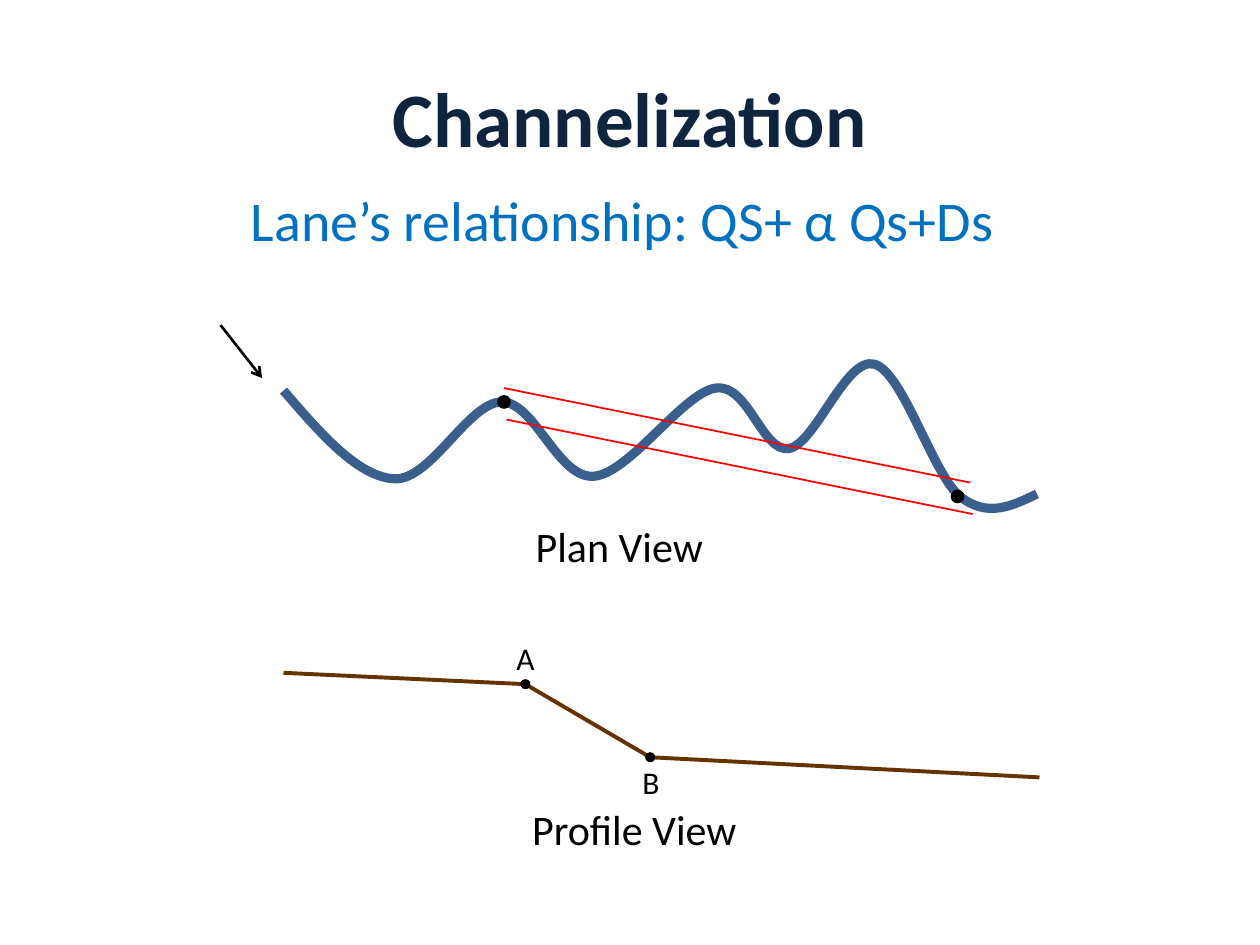
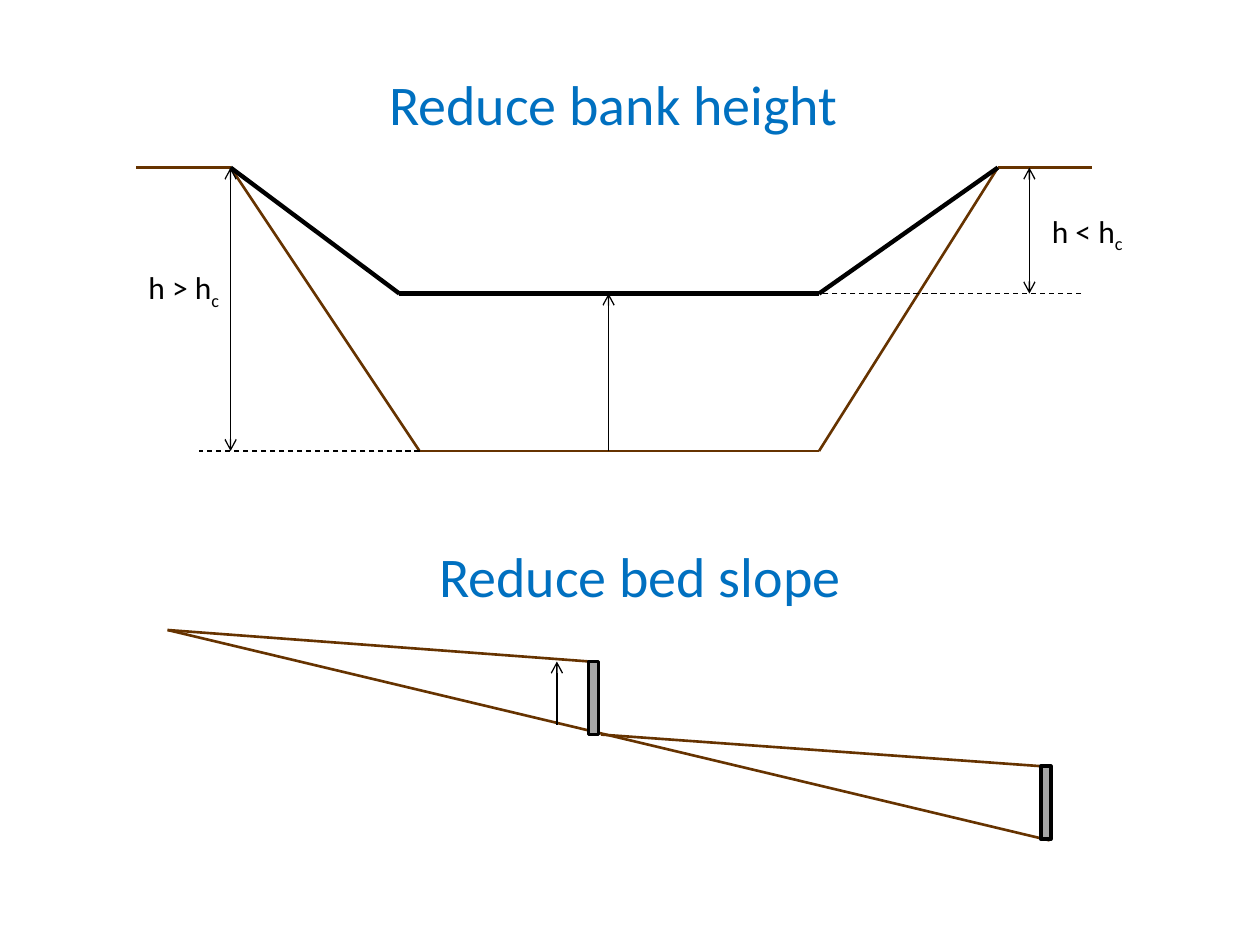
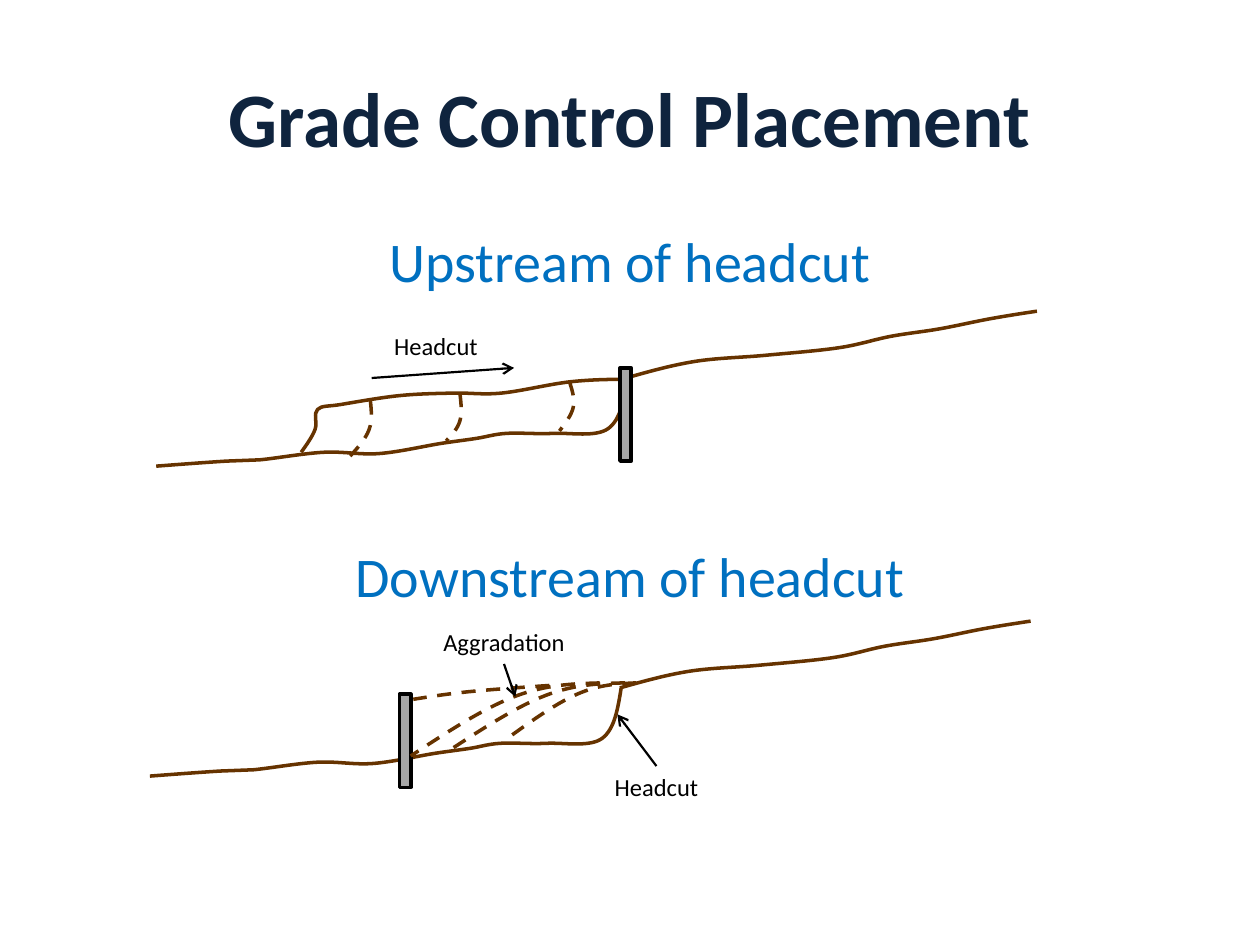
from dataclasses import dataclass
from itertools import pairwise

from lxml.etree import SubElement
from pptx import Presentation
from pptx.dml.color import RGBColor
from pptx.enum.dml import MSO_LINE
from pptx.enum.shapes import MSO_CONNECTOR, MSO_SHAPE
from pptx.enum.text import MSO_ANCHOR, PP_ALIGN
from pptx.oxml.ns import qn
from pptx.slide import Slide
from pptx.util import Emu, Pt

PX = 9144  # EMU per px, 100 px to the inch
FONT = "Calibri"
COLORS = {
    "title": "0F243E",
    "heading": "0070C0",
    "ink": "000000",
    "bed": "663300",
    "river": "3A5F8C",
    "cut": "FF0000",
    "weir": "A6A6A6",
}

Point = tuple[float, float]


@dataclass(frozen=True)
class TextStyle:
    size: int
    height: int
    color: str = "ink"
    bold: bool = False
    align: PP_ALIGN = PP_ALIGN.CENTER
    anchor: MSO_ANCHOR = MSO_ANCHOR.TOP


@dataclass(frozen=True)
class Label:
    text: str
    left: int
    top: int
    width: int
    style: TextStyle
    subscript: str = ""


@dataclass(frozen=True)
class Pen:
    color: str
    width: float
    dashed: bool = False
    head: bool = False
    tail: bool = False


@dataclass(frozen=True)
class Block:
    left: int
    top: int
    width: int
    height: int


TITLE = TextStyle(44, 125, "title", bold=True, anchor=MSO_ANCHOR.MIDDLE)
HEADING = TextStyle(32, 64, "heading")
CAPTION = TextStyle(24, 51)
MARK = TextStyle(18, 40, align=PP_ALIGN.LEFT)
NOTE = TextStyle(14, 34)

RIVER = Pen("river", 5.25)
CUT = Pen("cut", 1)
PROFILE = Pen("bed", 2.25)
BED = Pen("bed", 1.5)
GROUND = Pen("bed", 2)
GROUND_DASHED = Pen("bed", 2, dashed=True)
RAISED = Pen("ink", 2.5)
GUIDE = Pen("ink", 0.75, dashed=True)
RISE = Pen("ink", 0.75, tail=True)
SPAN = Pen("ink", 0.75, head=True, tail=True)
FLOW = Pen("ink", 1.5, tail=True)
POINTER = Pen("ink", 1.25, tail=True)


def px(value: float) -> Emu:
    return Emu(round(value * PX))


def rgb(name: str) -> RGBColor:
    return RGBColor.from_string(COLORS[name])


def add_label(s: Slide, label: Label) -> None:
    style = label.style
    box = s.shapes.add_textbox(
        px(label.left), px(label.top), px(label.width), px(style.height)
    )
    tf = box.text_frame
    tf.word_wrap = True
    tf.vertical_anchor = style.anchor
    p = tf.paragraphs[0]
    p.alignment = style.align
    p.font.name = FONT
    p.font.size = Pt(style.size)
    p.font.bold = style.bold
    p.font.color.rgb = rgb(style.color)
    p.add_run().text = label.text
    if label.subscript:
        r = p.add_run()
        r.text = label.subscript
        r._r.get_or_add_rPr().set("baseline", "-25000")


def add_title(s: Slide, text: str) -> None:
    add_label(s, Label(text, 50, 30, 900, TITLE))


def apply_pen(sp, pen: Pen) -> None:
    sp.line.color.rgb = rgb(pen.color)
    sp.line.width = Pt(pen.width)
    if pen.dashed:
        sp.line.dash_style = MSO_LINE.DASH
    ln = sp.element.spPr.find(qn("a:ln"))
    for tag, wanted in (("a:headEnd", pen.head), ("a:tailEnd", pen.tail)):
        if wanted:
            SubElement(ln, qn(tag), type="arrow")


def add_line(s: Slide, pen: Pen, start: Point, end: Point) -> None:
    ends = (px(v) for v in (*start, *end))
    sp = s.shapes.add_connector(MSO_CONNECTOR.STRAIGHT, *ends)
    apply_pen(sp, pen)
    SubElement(sp.element.spPr, qn("a:effectLst"))


def add_chain(s: Slide, pen: Pen, points: list[Point]) -> None:
    """Join successive points with straight lines."""
    for start, end in pairwise(points):
        add_line(s, pen, start, end)


def midpoint(a: Point, b: Point) -> Point:
    return (a[0] + b[0]) / 2, (a[1] + b[1]) / 2


def bezier_handles(points: list[Point]) -> list[tuple[Point, Point]]:
    """Control points of each segment of a smooth curve through the points."""
    before, after = {}, {}
    for i in range(1, len(points) - 1):
        (x0, y0), (x, y), (x1, y1) = points[i - 1 : i + 2]
        dx, dy = (x1 - x0) / 6, (y1 - y0) / 6
        before[i], after[i] = (x - dx, y - dy), (x + dx, y + dy)
    last = len(points) - 1
    after[0] = midpoint(points[0], before[1])
    before[last] = midpoint(after[last - 1], points[last])
    return [(after[i], before[i + 1]) for i in range(last)]


def add_curve(s: Slide, pen: Pen, points: list[Point]) -> None:
    """Draw a smooth open curve through three or more points."""
    nodes = [(x * PX, y * PX) for x, y in points]
    builder = s.shapes.build_freeform(*nodes[0])
    builder.add_line_segments(nodes[1:], close=False)
    sp = builder.convert_to_shape()
    sp.shadow.inherit = False
    sp.fill.background()
    apply_pen(sp, pen)
    segments = list(sp.element.iter(qn("a:lnTo")))
    for segment, handles in zip(segments, bezier_handles(nodes)):
        segment.tag = qn("a:cubicBezTo")
        for i, (x, y) in enumerate(handles):
            pt = SubElement(
                segment, qn("a:pt"), x=str(round(x - sp.left)), y=str(round(y - sp.top))
            )
            segment.insert(i, pt)


def add_dot(s: Slide, center: Point, size: int) -> None:
    x, y = center
    sp = s.shapes.add_shape(
        MSO_SHAPE.OVAL, px(x - size / 2), px(y - size / 2), px(size), px(size)
    )
    sp.shadow.inherit = False
    sp.fill.solid()
    sp.fill.fore_color.rgb = rgb("ink")
    sp.line.fill.background()


def add_weir(s: Slide, block: Block) -> None:
    sp = s.shapes.add_shape(
        MSO_SHAPE.RECTANGLE,
        px(block.left), px(block.top), px(block.width), px(block.height),
    )
    sp.shadow.inherit = False
    sp.fill.solid()
    sp.fill.fore_color.rgb = rgb("weir")
    apply_pen(sp, Pen("ink", 2))


def build_channelization(s: Slide) -> None:
    add_title(s, "Channelization")

    point_a, point_b = (417, 543), (516, 601)
    add_chain(s, PROFILE, [(225, 534), point_a, point_b, (825, 617)])
    for point in (point_a, point_b):
        add_dot(s, point, 8)

    add_curve(s, RIVER, [
        (225, 310), (313, 380), (398, 319), (471, 378), (568, 308),
        (626, 356), (694, 289), (762, 394), (823, 392),
    ])
    for point in ((400, 319), (760, 394)):
        add_dot(s, point, 11)
    for x, y in ((400, 308), (402, 333)):
        add_line(s, CUT, (x, y), (x + 370, y + 75))
    add_line(s, FLOW, (175, 258), (208, 300))

    for label in (
        Label("A", 400, 502, 33, MARK),
        Label("B", 500, 601, 33, MARK),
        Label("Lane’s relationship: QS+ α Qs+Ds", 180, 142, 628, HEADING),
        Label("Plan View", 258, 408, 467, CAPTION),
        Label("Profile View", 270, 633, 467, CAPTION),
    ):
        add_label(s, label)


def build_bank_and_bed(s: Slide) -> None:
    top, raised, bottom = 133, 233, 358
    left_bank, right_bank = (183, top), (792, top)
    add_chain(s, BED, [
        (108, top), left_bank, (333, bottom), (650, bottom), right_bank, (867, top),
    ])
    add_chain(s, RAISED, [left_bank, (317, raised), (650, raised), right_bank])
    add_line(s, SPAN, left_bank, (183, bottom))
    add_line(s, SPAN, (817, top), (817, raised))
    add_line(s, RISE, (483, bottom), (483, raised))
    add_line(s, GUIDE, (333, bottom), (158, bottom))
    add_line(s, GUIDE, (858, raised), (642, raised))

    add_line(s, BED, (133, 500), (833, 667))
    add_line(s, BED, (133, 500), (468, 525))
    add_line(s, BED, (477, 583), (825, 608))
    for left, weir_top in ((467, 525), (826, 608)):
        add_weir(s, Block(left, weir_top, 8, 58))
    add_line(s, RISE, (442, 575), (442, 525))

    for label in (
        Label("h > h", 108, 208, 83, MARK, subscript="c"),
        Label("h < h", 825, 163, 83, MARK, subscript="c"),
        Label("Reduce bank height", 283, 50, 408, HEADING),
        Label("Reduce bed slope", 208, 425, 600, HEADING),
    ):
        add_label(s, label)


def add_stream_bed(s: Slide, dx: int = 0, dy: int = 0) -> None:
    """Draw the bed below the headcut and the bed above it."""
    lower = [
        (124, 370), (180, 366), (206, 365), (257, 359), (301, 360), (350, 352),
        (378, 348), (402, 344), (439, 344), (483, 340), (498, 300),
    ]
    upper = [
        (497, 300), (551, 287), (608, 282), (666, 276), (707, 267),
        (746, 261), (786, 253), (823, 247),
    ]
    for bed in (lower, upper):
        add_curve(s, GROUND, [(x + dx, y + dy) for x, y in bed])


def build_grade_control(s: Slide) -> None:
    add_title(s, "Grade Control Placement")

    add_stream_bed(s)
    add_curve(s, GROUND, [
        (500, 301), (453, 303), (398, 312), (360, 312), (317, 314),
        (271, 321), (252, 325), (250, 341), (239, 359),
    ])
    for headcut in (
        [(294, 318), (293, 341), (278, 362)],
        [(365, 312), (365, 334), (354, 350)],
        [(452, 303), (455, 323), (444, 342)],
    ):
        add_curve(s, GROUND_DASHED, headcut)
    add_weir(s, Block(492, 292, 9, 74))
    add_line(s, POINTER, (295, 300), (408, 292))

    add_stream_bed(s, dx=-5, dy=246)
    add_weir(s, Block(317, 551, 9, 74))
    for deposit in (
        [(505, 542), (458, 551), (400, 588)],
        [(496, 542), (433, 552), (356, 596)],
        [(476, 542), (408, 553), (326, 600)],
        [(436, 544), (372, 549), (328, 555)],
    ):
        add_curve(s, GROUND_DASHED, deposit)
    add_line(s, POINTER, (521, 608), (490, 567))
    add_line(s, POINTER, (400, 527), (409, 553))

    for label in (
        Label("Upstream of headcut", 50, 175, 900, HEADING),
        Label("Downstream of headcut", 50, 425, 900, HEADING),
        Label("Headcut", 267, 258, 158, NOTE),
        Label("Headcut", 442, 608, 158, NOTE),
        Label("Aggradation", 321, 493, 158, NOTE),
    ):
        add_label(s, label)


def main() -> None:
    prs = Presentation()
    prs.slide_width, prs.slide_height = px(1000), px(750)
    blank = prs.slide_layouts[6]
    for build in (build_channelization, build_bank_and_bed, build_grade_control):
        build(prs.slides.add_slide(blank))
    prs.save("out.pptx")


if __name__ == "__main__":
    main()
